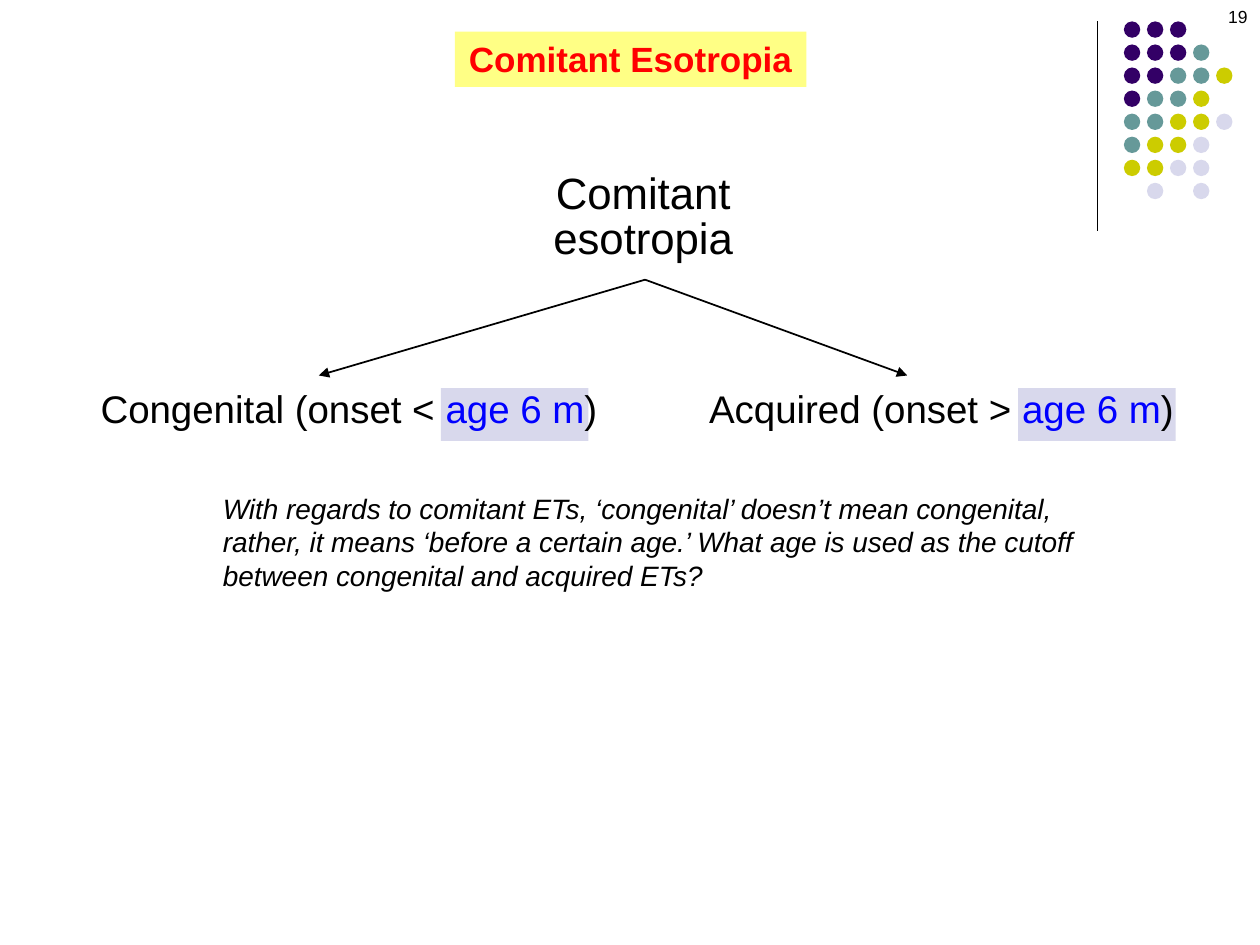
from pptx import Presentation
from pptx.dml.color import RGBColor
from pptx.enum.dml import MSO_LINE
from pptx.enum.shapes import MSO_CONNECTOR, MSO_SHAPE
from pptx.enum.text import MSO_ANCHOR, MSO_AUTO_SIZE, PP_ALIGN
from pptx.oxml.ns import qn
from pptx.util import Inches, Pt
from lxml.etree import SubElement

BLACK = RGBColor(0x00, 0x00, 0x00)
RED = RGBColor(0xFF, 0x00, 0x00)
BLUE = RGBColor(0x00, 0x00, 0xFF)
YELLOW = RGBColor(0xFF, 0xFF, 0x85)
PURPLE = RGBColor(0x33, 0x00, 0x66)
TEAL = RGBColor(0x66, 0x99, 0x99)
OLIVE = RGBColor(0xCC, 0xCC, 0x00)
LAVENDER = RGBColor(0xD8, 0xD8, 0xEC)


def write(sp, paragraphs, size, align=PP_ALIGN.LEFT, wrap=False, spacing=None):
    tf = sp.text_frame
    tf.word_wrap = wrap
    tf.auto_size = MSO_AUTO_SIZE.NONE
    tf.vertical_anchor = MSO_ANCHOR.TOP
    for i, runs in enumerate(paragraphs):
        p = tf.add_paragraph() if i else tf.paragraphs[0]
        p.alignment = align
        p.line_spacing = spacing
        for text, color in runs:
            r = p.add_run()
            r.text = text
            r.font.name = "Arial"
            r.font.size = Pt(size)
            r.font.color.rgb = color
    return tf


def add_filled(kind, left, top, width, height, color):
    sp = s.shapes.add_shape(kind, Inches(left), Inches(top), Inches(width), Inches(height))
    sp.shadow.inherit = False
    sp.fill.solid()
    sp.fill.fore_color.rgb = color
    sp.line.fill.background()


prs = Presentation()
prs.slide_width = Inches(10)
prs.slide_height = Inches(7.5)
s = prs.slides.add_slide(prs.slide_layouts[5])

dot_colors = {"P": PURPLE, "T": TEAL, "O": OLIVE, "L": LAVENDER}
dot_rows = ["PPP", "PPPT", "PPTTO", "PTTO", "TTOOL", "TOOL", "OOLL", " L L"]
for row, codes in enumerate(dot_rows):
    for col, code in enumerate(codes):
        if code in dot_colors:
            add_filled(MSO_SHAPE.OVAL, 8.92 + 0.183 * col, 0.17 + 0.183 * row,
                       0.13, 0.13, dot_colors[code])

for left, width in [(8.08, 1.25), (3.5, 1.17)]:
    add_filled(MSO_SHAPE.RECTANGLE, left, 3.08, width, 0.42, LAVENDER)

for x1, y1, x2, y2, weight, arrow in [
    (8.71, 0.17, 8.71, 1.83, 0.75, False),
    (5.12, 2.22, 2.53, 2.98, 1, True),
    (5.12, 2.22, 7.2, 2.98, 1, True),
]:
    line = s.shapes.add_connector(MSO_CONNECTOR.STRAIGHT, Inches(x1), Inches(y1),
                                  Inches(x2), Inches(y2))
    line.line.color.rgb = BLACK
    line.line.width = Pt(weight)
    line.line.dash_style = MSO_LINE.SOLID
    if arrow:
        SubElement(line.line._get_or_add_ln(), qn("a:tailEnd"), type="triangle")
    SubElement(line._element.spPr, qn("a:effectLst"))

for label, left, width in [("Congenital (onset < ", 0.7, 4.16),
                           ("Acquired (onset > ", 5.53, 3.9)]:
    sp = s.shapes.add_textbox(Inches(left), Inches(3.01), Inches(width), Inches(0.47))
    write(sp, [[(label, BLACK), ("age 6 m", BLUE), (")", BLACK)]], 22)

sp = s.shapes.add_textbox(Inches(4.29), Inches(1.33), Inches(1.63), Inches(0.81))
write(sp, [[("Comitant", BLACK)], [("esotropia", BLACK)]], 25, PP_ALIGN.CENTER, spacing=0.85)

sp = s.shapes.add_textbox(Inches(7.67), Inches(0), Inches(2.33), Inches(0.5))
write(sp, [[("19", BLACK)]], 10, PP_ALIGN.RIGHT, wrap=True)

sp = s.shapes.add_textbox(Inches(1.67), Inches(3.85), Inches(7.03), Inches(0.91))
tf = write(sp, [[("With regards to comitant ETs, ‘congenital’ doesn’t mean congenital, "
                  "rather, it means ‘before a certain age.’ What age is used as the cutoff "
                  "between congenital and acquired ETs?", BLACK)]], 16, wrap=True)
tf.paragraphs[0].runs[0].font.italic = True

title = s.shapes.title
title.left, title.top = Inches(3.61), Inches(0.25)
title.width, title.height = Inches(2.79), Inches(0.44)
title.fill.solid()
title.fill.fore_color.rgb = YELLOW
tf = write(title, [[("Comitant Esotropia", RED)]], 20, PP_ALIGN.CENTER)
tf.paragraphs[0].runs[0].font.bold = True

prs.save("out.pptx")
